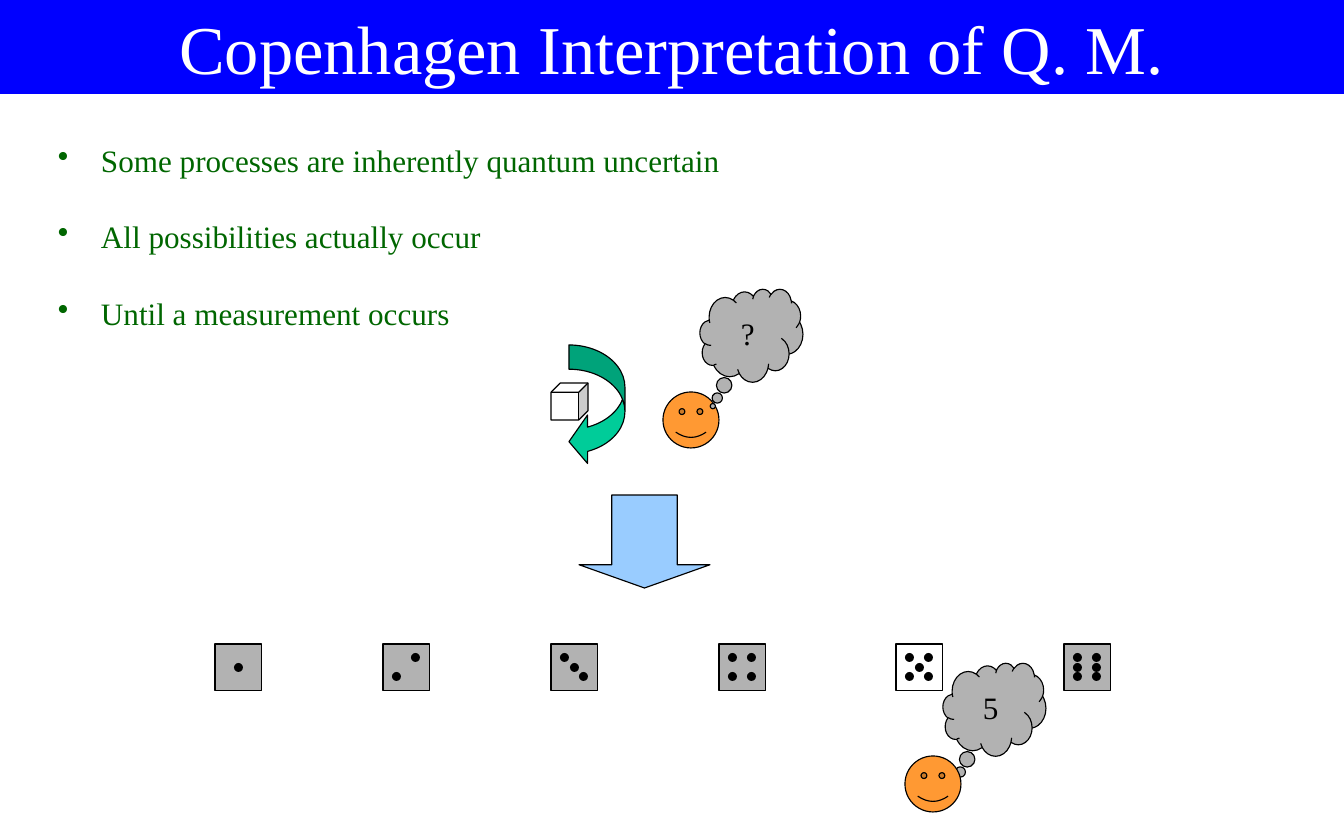
from lxml import etree
from pptx import Presentation
from pptx import util as u
from pptx.dml.color import RGBColor
from pptx.enum import shapes, text
from pptx.oxml.ns import qn

SCALE = 914400 / 112  # EMU in one px
COLORS = {
    "white": "FFFFFF", "black": "000000", "blue": "0000FF", "green": "006600",
    "teal": "00CC99", "orange": "FF9933", "grey": "B2B2B2", "sky": "99CCFF",
}
FONT = "Times New Roman"
KIND = shapes.MSO_SHAPE


def px(*lengths):
    return [u.Emu(round(length * SCALE)) for length in lengths]


def color(name):
    return RGBColor.from_string(COLORS[name])


def write(para, words, size=20, ink="black", align=None, before=0):
    para.alignment = align
    para.space_before = u.Pt(before)
    span = para.add_run()
    span.text = words
    span.font.name = FONT
    span.font.size = u.Pt(size)
    span.font.color.rgb = color(ink)


class Slide:
    def __init__(self, deck):
        self.page = deck.slides.add_slide(deck.slide_layouts[6])

    def shape(self, kind, at, fill, line="black", adjust=(), parent=None):
        shape = (parent or self.page).shapes.add_shape(kind, *px(*at))
        shape.shadow.inherit = False
        shape.fill.solid()
        shape.fill.fore_color.rgb = color(fill)
        if line:
            shape.line.color.rgb = color(line)
            shape.line.width = u.Pt(0.75)
        else:
            shape.line.fill.background()
        for index, value in enumerate(adjust):
            shape.adjustments[index] = value
        return shape

    def title(self, words):
        bar = self.shape(KIND.RECTANGLE, (0, 0, 1344, 94), "blue", line=None)
        frame = bar.text_frame
        frame.word_wrap = True
        frame.vertical_anchor = text.MSO_ANCHOR.BOTTOM
        write(frame.paragraphs[0], words, size=44, ink="white", align=text.PP_ALIGN.CENTER)

    def bullets(self, at, lines, indent=43, gap=25):
        frame = self.page.shapes.add_textbox(*px(*at)).text_frame
        frame.word_wrap = True
        for index, words in enumerate(lines):
            para = frame.add_paragraph() if index else frame.paragraphs[0]
            write(para, words, ink="green", before=gap if index else 0)
            props = para._p.get_or_add_pPr()
            margin = px(indent)[0]
            props.set("marL", str(margin))
            props.set("indent", str(-margin))
            etree.SubElement(props, qn("a:buChar")).set("char", "•")

    def thought(self, left, top, words):
        cloud = self.shape(KIND.CLOUD_CALLOUT, (left, top, 103, 93), "grey",
                           adjust=(-0.375, 0.76))
        frame = cloud.text_frame
        frame.word_wrap = True
        frame.vertical_anchor = text.MSO_ANCHOR.MIDDLE
        write(frame.paragraphs[0], words, align=text.PP_ALIGN.CENTER)

    def observer(self, left, top):
        self.shape(KIND.SMILEY_FACE, (left, top, 56, 56), "orange", adjust=(0.047,))

    def die(self, left, top, pips, fill):
        group = self.page.shapes.add_group_shape()
        self.shape(KIND.RECTANGLE, (left, top, 47, 47), fill, parent=group)
        steps = (9, 19, 28)
        for column, row in pips:
            at = (left + steps[column], top + steps[row], 9, 9)
            self.shape(KIND.OVAL, at, "black", line=None, parent=group)


def main():
    deck = Presentation()
    deck.slide_width, deck.slide_height = px(1344, 840)
    slide = Slide(deck)

    # Heading and statements
    slide.title("Copenhagen Interpretation of Q. M.")
    slide.bullets((47, 136, 1185, 199), [
        "Some processes are inherently quantum uncertain",
        "All possibilities actually occur",
        "Until a measurement occurs",
    ])

    # Rolling die and the uncertain observer
    slide.shape(KIND.CURVED_LEFT_ARROW, (569, 345, 56, 121), "teal",
                adjust=(0.433, 0.867, 0.333))
    slide.shape(KIND.CUBE, (551, 383, 37, 37), "white", adjust=(0.25,))
    slide.observer(663, 392)
    slide.thought(700, 289, "?")

    # Arrow to the outcomes
    slide.shape(KIND.DOWN_ARROW, (579, 495, 131, 93), "sky", adjust=(0.5, 0.25))

    # Observer who has measured a five
    slide.thought(943, 663, "5")
    slide.observer(905, 756)

    # Six outcomes, pips as (column, row); the last two dice sit further right
    rising = [(2, 0), (0, 2)]
    falling = [(0, 0), (2, 2)]
    corners = rising + falling
    middle = [(1, 1)]
    faces = [middle, rising, falling + middle, corners, corners + middle,
             corners + [(0, 1), (2, 1)]]
    for index, pips in enumerate(faces):
        left = 215 + 168 * index + (9 if index > 3 else 0)
        slide.die(left, 644, pips, "white" if index == 4 else "grey")

    deck.save("out.pptx")


if __name__ == "__main__":
    main()
